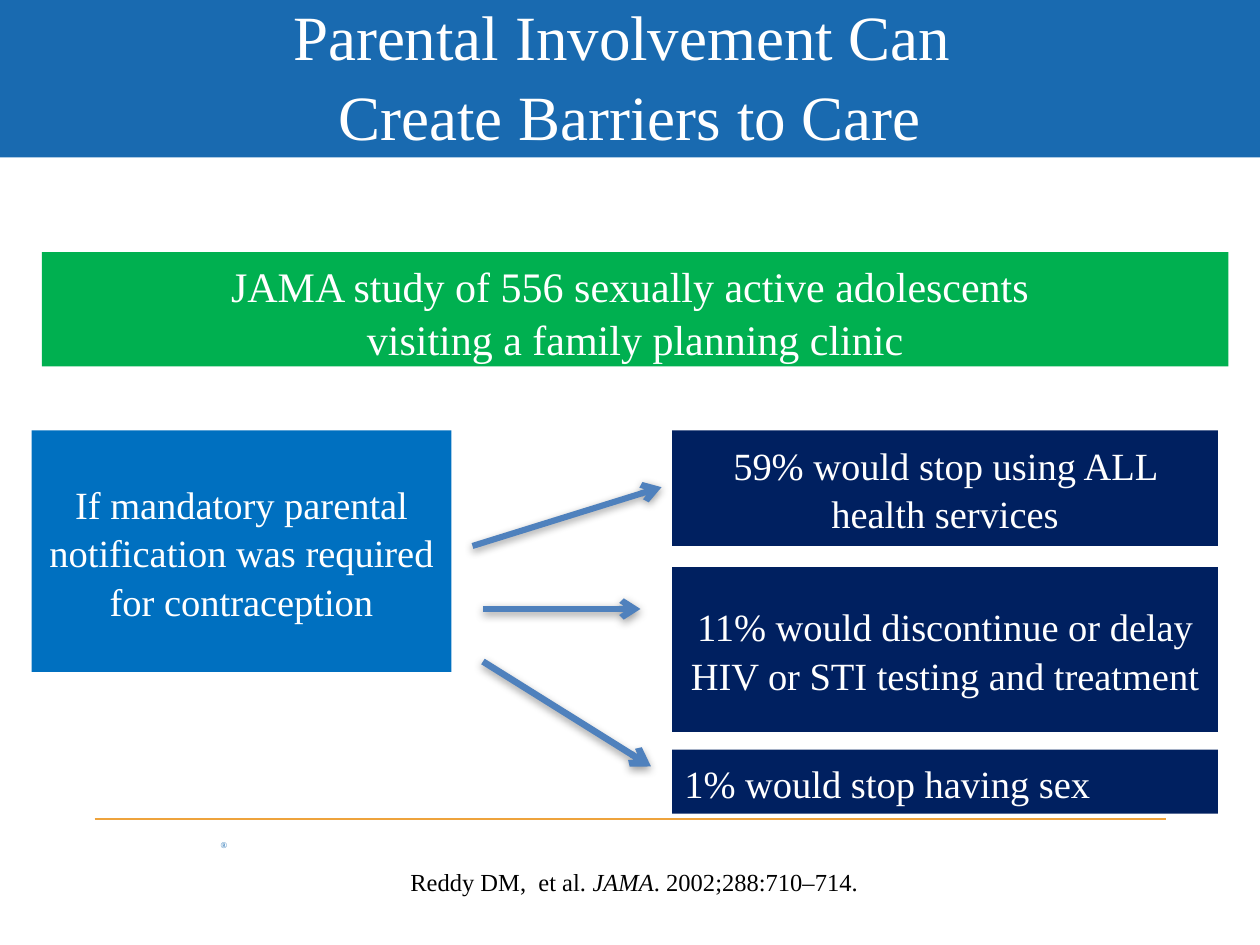
from dataclasses import dataclass
from lxml import etree
from pptx import Presentation
from pptx.dml.color import RGBColor
from pptx.enum.shapes import MSO_CONNECTOR, MSO_SHAPE
from pptx.enum.text import MSO_ANCHOR, PP_ALIGN
from pptx.oxml.ns import qn
from pptx.util import Inches, Pt

RECT, STRAIGHT = MSO_SHAPE.RECTANGLE, MSO_CONNECTOR.STRAIGHT
TOP, MIDDLE = MSO_ANCHOR.TOP, MSO_ANCHOR.MIDDLE
LEFT, CENTER = PP_ALIGN.LEFT, PP_ALIGN.CENTER
COLS, ROWS = 120, 90


@dataclass(frozen=True)
class Theme:
    font: str = "Times New Roman"
    banner: str = "196AB0"
    study: str = "00B050"
    cause: str = "0070C0"
    effect: str = "002060"
    arrow: str = "4F81BD"
    rule: str = "EEA33C"
    light: str = "FFFFFF"
    dark: str = "000000"
    title_size: float = 36
    study_size: float = 24
    body_size: float = 22
    source_size: float = 14
    mark_size: float = 5
    spacing: float = 1.05


T = Theme()
prs = Presentation()
prs.slide_width, prs.slide_height = Inches(10), Inches(7.5)


def x(col):
    return round(prs.slide_width * col / COLS)


def y(row):
    return round(prs.slide_height * row / ROWS)


def grid(left, top, width, height):
    return x(left), y(top), x(width), y(height)


def style(p, size, color, align=CENTER):
    p.alignment = align
    p.font.name = T.font
    p.font.size = Pt(size)
    p.font.color.rgb = RGBColor.from_string(color)


def add_panel(s, box, fill, text="", size=T.body_size, align=CENTER, anchor=MIDDLE):
    sp = s.shapes.add_shape(RECT, *grid(*box))
    sp.shadow.inherit = False
    sp.fill.solid()
    sp.fill.fore_color.rgb = RGBColor.from_string(fill)
    sp.line.fill.background()
    if text:
        tf = sp.text_frame
        tf.word_wrap = True
        tf.vertical_anchor = anchor
        p = tf.paragraphs[0]
        p.text = text
        p.line_spacing = T.spacing
        style(p, size, T.light, align)
    return sp


def add_line(s, start, end, color, width):
    line = s.shapes.add_connector(STRAIGHT, x(start[0]), y(start[1]), x(end[0]), y(end[1]))
    line.line.color.rgb = RGBColor.from_string(color)
    line.line.width = Pt(width)
    effects = etree.SubElement(line._element.spPr, qn("a:effectLst"))
    return line, effects


def add_arrow(s, start, end, width=3.5):
    line, effects = add_line(s, start, end, T.arrow, width)
    etree.SubElement(line.line._get_or_add_ln(), qn("a:tailEnd"), type="arrow")
    shadow = etree.SubElement(effects, qn("a:outerShdw"), blurRad=str(Pt(5)),
                              dist=str(Pt(1.6)), dir="5400000", rotWithShape="0")
    color = etree.SubElement(shadow, qn("a:srgbClr"), val=T.dark)
    etree.SubElement(color, qn("a:alpha"), val="38000")


def add_header(s, box):
    left, top, width, height = box
    banner = add_panel(s, box, T.banner)
    s.shapes._spTree.insert(2, banner._element)
    title = s.shapes.title
    title.left, title.top, title.width, title.height = grid(left + 6, top + 1, width - 12, height - 3)
    tf = title.text_frame
    tf.vertical_anchor = MIDDLE
    p = tf.paragraphs[0]
    p.text = "Parental Involvement Can \vCreate Barriers to Care"
    p.line_spacing = T.spacing
    style(p, T.title_size, T.light)


def add_outcomes(s, box):
    left, top, width, height = box
    add_panel(s, (left, top, 40, 23), T.cause,
              "If mandatory parental notification was required for contraception")
    effects = [
        (0, 11, "59% would stop using ALL health services", CENTER),
        (13, 15.7, "11% would discontinue or delay HIV or STI testing and treatment", CENTER),
        (30.4, 6.1, "1% would stop having sex", LEFT),
    ]
    for row, rows, text, align in effects:
        add_panel(s, (left + width - 52, top + row, 52, rows), T.effect, text, align=align)
    arrows = [((42, 11), (60, 5.4), 3.5), ((43, 17), (58, 17), 3.5), ((43, 22), (59, 32), 3.75)]
    for (x1, y1), (x2, y2), weight in arrows:
        add_arrow(s, (left + x1, top + y1), (left + x2, top + y2), weight)


def add_text(s, box, runs, size, color, align, inset=None):
    tf = s.shapes.add_textbox(*grid(*box)).text_frame
    tf.word_wrap = False
    if inset is not None:
        tf.margin_left = tf.margin_right = tf.margin_top = tf.margin_bottom = inset
    p = tf.paragraphs[0]
    style(p, size, color, align)
    for text, italic in runs:
        r = p.add_run()
        r.text = text
        r.font.italic = italic


def add_footer(s, box):
    left, top, width, height = box
    add_line(s, (left, top), (left + width, top), T.rule, 0.75)
    add_text(s, (left + 12, top + 2, 3, 1), [("®", False)], T.mark_size, T.banner, LEFT, 0)
    source = [("Reddy DM,  et al. ", False), ("JAMA", True), (". 2002;288:710–714.", False)]
    add_text(s, (left + 28.8, top + 4, 45.2, 4.1), source, T.source_size, T.dark, CENTER)


def main():
    s = prs.slides.add_slide(prs.slide_layouts[5])
    add_header(s, (0, 0, COLS, 15))
    add_footer(s, (9, 78, 102, 12))
    add_panel(s, (4, 24, 113, 10.9), T.study,
              "JAMA study of 556 sexually active adolescents \vvisiting a family planning clinic",
              T.study_size, anchor=TOP)
    add_outcomes(s, (3, 41, 113, 36.5))
    prs.save("out.pptx")


if __name__ == "__main__":
    main()
